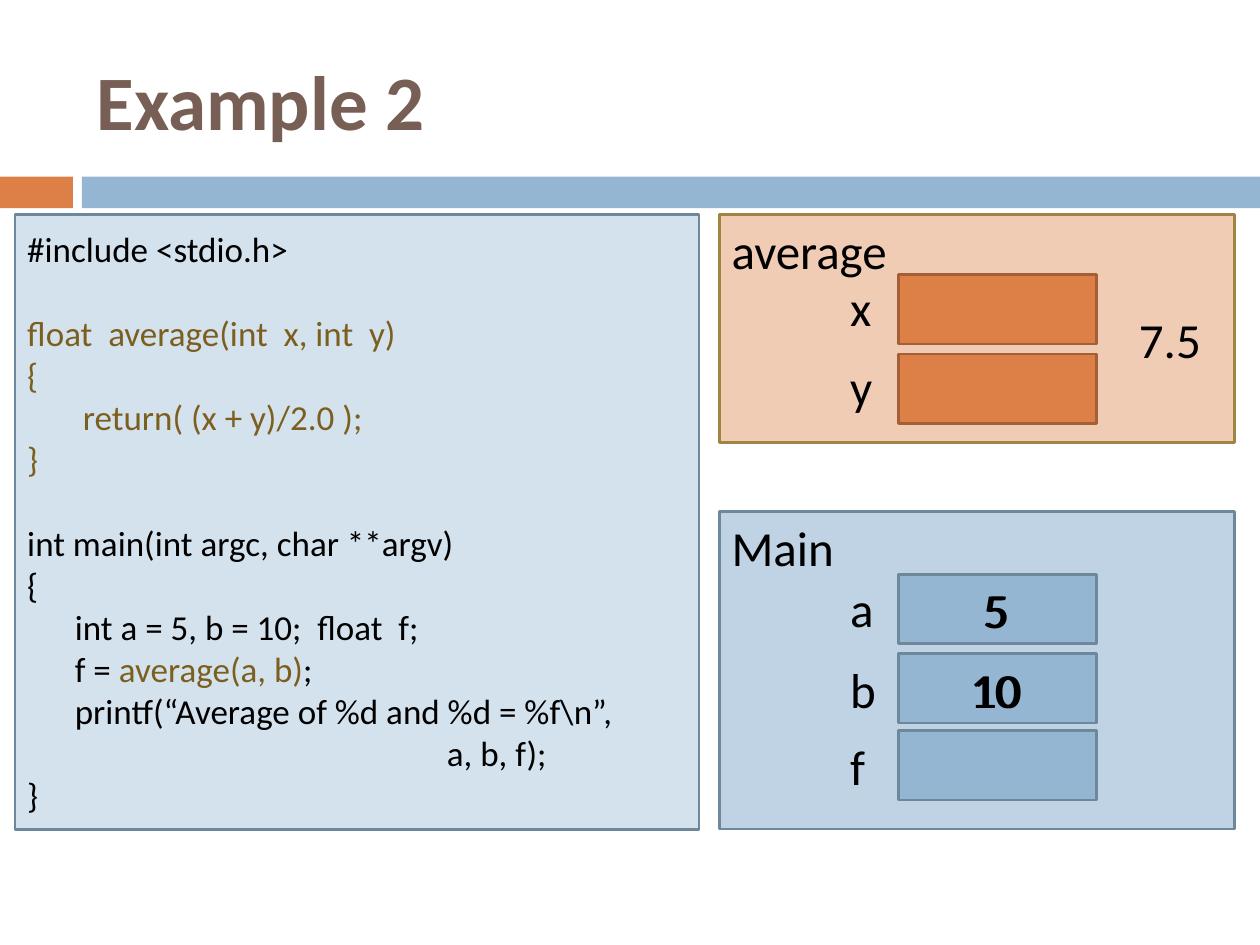
from pptx import Presentation
from pptx.dml.color import RGBColor
from pptx.enum.shapes import MSO_SHAPE
from pptx.enum.text import MSO_ANCHOR, PP_ALIGN
from pptx.util import Cm, Pt

RECTANGLE = MSO_SHAPE.RECTANGLE
TOP, MIDDLE = MSO_ANCHOR.TOP, MSO_ANCHOR.MIDDLE
LEFT, CENTER = PP_ALIGN.LEFT, PP_ALIGN.CENTER

COLORS = {
    "black": "000000",
    "title": "775F55",
    "function": "7C5F1E",
    "orange": "DD8047",
    "orange edge": "A35F35",
    "peach": "F1CCB5",
    "gold edge": "A08444",
    "blue": "94B6D2",
    "blue edge": "6D879B",
    "light blue": "BFD3E4",
    "pale blue": "D4E2ED",
}

CODE = [
    (0, 0, [("#include <stdio.h>", "black")]),
    (0, 24, [("float  average(int  x, int  y)", "function")]),
    (0, 0, [("{", "function")]),
    (1.12, 0, [("return( (x + y)/2.0 );", "function")]),
    (0, 0, [("}", "function")]),
    (0, 24, [("int main(int argc, char **argv)", "black")]),
    (0, 0, [("{", "black")]),
    (0.96, 0, [("int a = 5, b = 10;  float  f;", "black")]),
    (0.96, 0, [("f = ", "black"), ("average(a, b)", "function"), (";", "black")]),
    (0.96, 0, [("printf(“Average of %d and %d = %f\\n”,", "black")]),
    (8.46, 0, [("a, b, f);", "black")]),
    (0, 0, [("}", "black")]),
]

VARIABLES = [
    ("x", 5.54, 5.46, "", "orange"),
    ("y", 7.14, 7.06, "", "orange"),
    ("a", 11.58, 11.53, "5", "blue"),
    ("b", 13.18, 13.18, "10", "blue"),
    ("f", 14.73, 14.73, "", "blue"),
]

VALUES = [
    ("5", 19.56, 11.56, 0.99),
    ("10", 19.3, 13.18, 1.8),
    ("7.5", 22.71, 6.12, 2.01),
]


class SlideBuilder:
    font = "Calibri"
    edge_width = Pt(1.5)

    def __init__(self, slide):
        self.slide = slide

    def color(self, name):
        return RGBColor.from_string(COLORS[name])

    def rectangle(self, left, top, width, height, fill, edge=None):
        shape = self.slide.shapes.add_shape(
            RECTANGLE, Cm(left), Cm(top), Cm(width), Cm(height))
        shape.shadow.inherit = False
        shape.fill.solid()
        shape.fill.fore_color.rgb = self.color(fill)
        if edge:
            shape.line.color.rgb = self.color(edge)
            shape.line.width = self.edge_width
        else:
            shape.line.fill.background()
        return shape

    def span(self, para, text, size, color, bold=False):
        span = para.add_run()
        span.text = text
        span.font.name = self.font
        span.font.size = Pt(size)
        span.font.bold = bold
        span.font.color.rgb = self.color(color)

    def caption(self, shape, text, size=28, color="black", bold=False,
                anchor=TOP, align=LEFT):
        frame = shape.text_frame
        frame.word_wrap = True
        frame.vertical_anchor = anchor
        para = frame.paragraphs[0]
        para.alignment = align
        self.span(para, text, size, color, bold)

    def label(self, text, left, top, width, height=1.45, **style):
        box = self.slide.shapes.add_textbox(
            Cm(left), Cm(top), Cm(width), Cm(height))
        self.caption(box, text, **style)

    def panel(self, text, top, height, fill, edge):
        self.caption(self.rectangle(14.5, top, 10.39, height, fill, edge), text)

    def code(self, lines, shape, size=20):
        frame = shape.text_frame
        frame.word_wrap = True
        frame.vertical_anchor = MIDDLE
        for index, (indent, gap, spans) in enumerate(lines):
            para = frame.add_paragraph() if index else frame.paragraphs[0]
            para.alignment = LEFT
            para.space_before = Pt(gap)
            para._p.get_or_add_pPr().set("marL", str(Cm(indent)))
            for text, color in spans:
                self.span(para, text, size, color)

    def variable(self, name, top, label_top, value, fill):
        slot = self.rectangle(18.11, top, 3.99, 1.4, fill, fill + " edge")
        if value:
            self.caption(slot, value, anchor=MIDDLE, align=CENTER)
        self.label(name, 16.89, label_top, 1.4)


def main():
    deck = Presentation()
    deck.slide_width, deck.slide_height = Cm(25.4), Cm(19.05)
    page = SlideBuilder(deck.slides.add_slide(deck.slide_layouts[6]))

    page.rectangle(0, 3.56, 1.47, 0.64, "orange")
    page.rectangle(1.65, 3.56, 23.75, 0.64, "blue")
    page.label("Example 2", 1.7, 0.64, 22.66, 2.74,
               size=44, color="title", bold=True, anchor=MIDDLE)

    page.code(CODE, page.rectangle(0.3, 4.32, 13.79, 12.4, "pale blue", "blue edge"))
    page.panel("average", 4.32, 4.6, "peach", "gold edge")
    page.panel("Main", 10.31, 6.4, "light blue", "blue edge")
    for variable in VARIABLES:
        page.variable(*variable)
    for value in VALUES:
        page.label(*value)

    deck.save("out.pptx")


if __name__ == "__main__":
    main()
